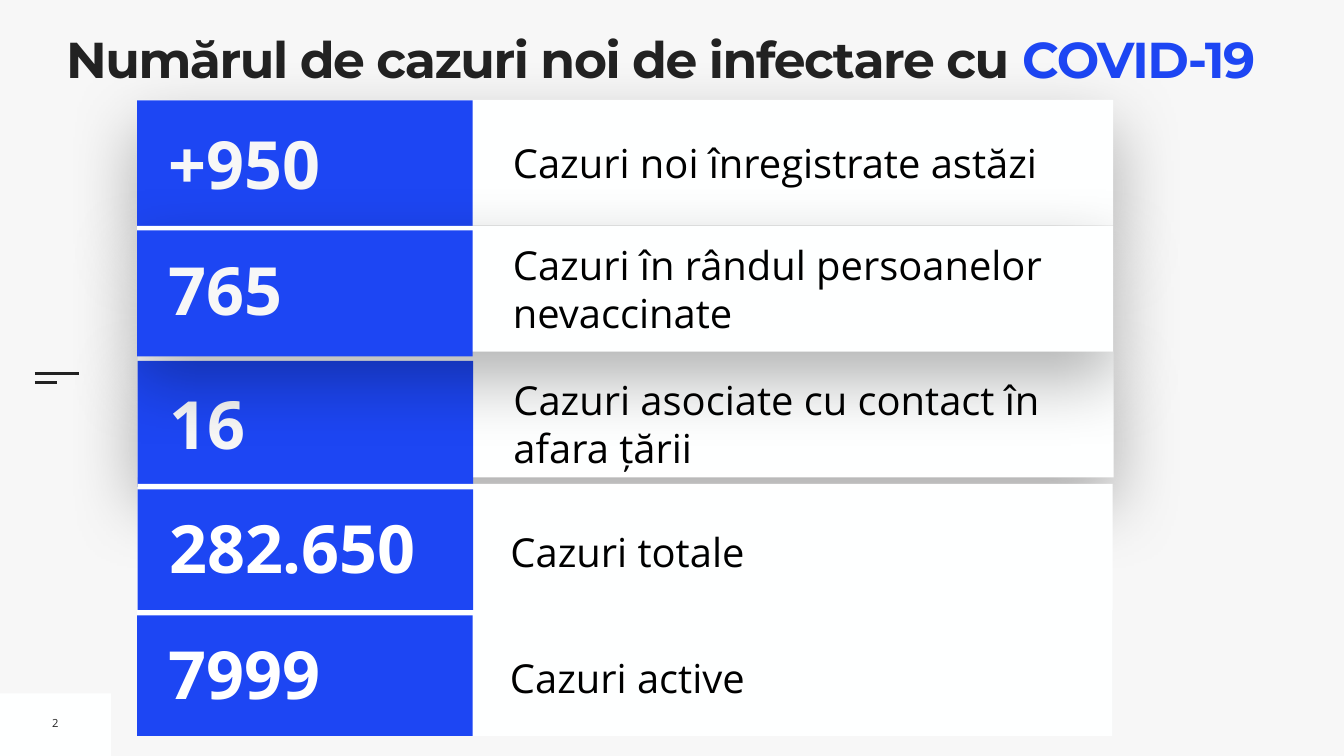
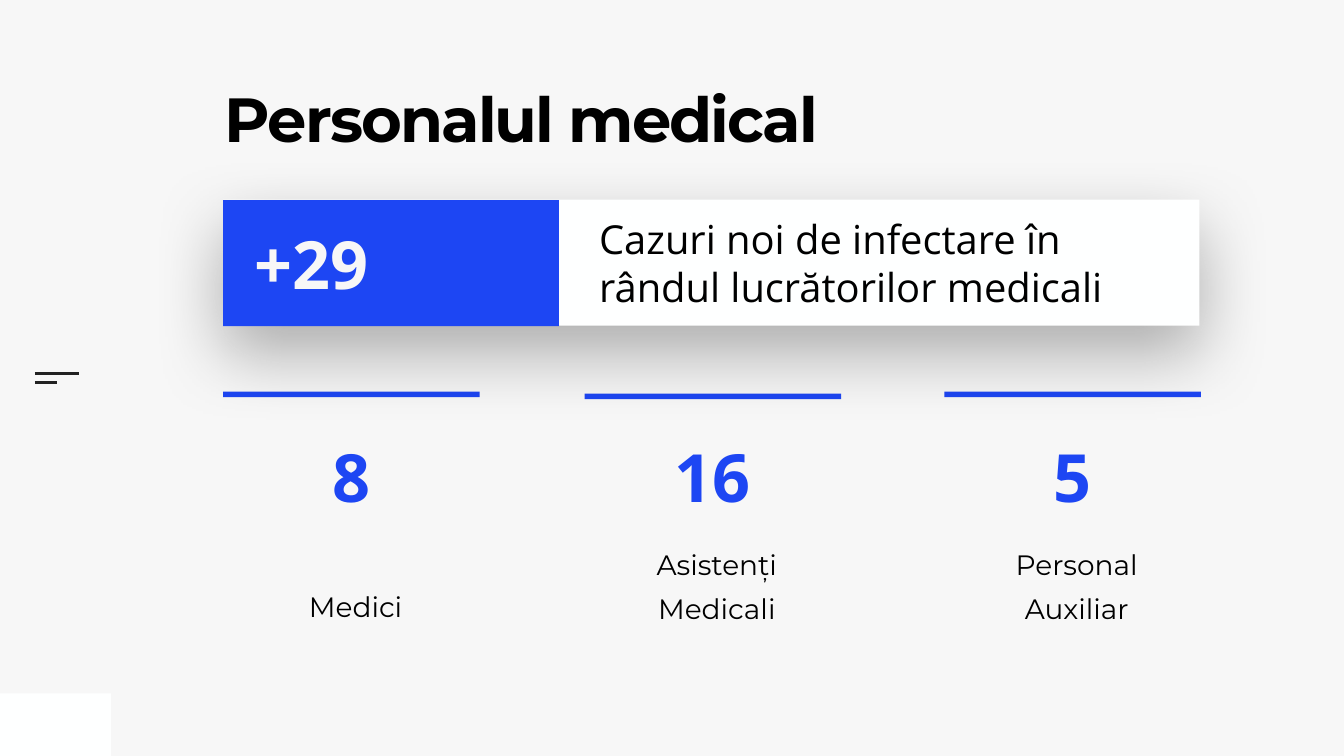
from lxml import etree
from pptx import Presentation
from pptx.dml.color import RGBColor
from pptx.enum.shapes import MSO_CONNECTOR, MSO_SHAPE
from pptx.enum.text import MSO_ANCHOR, MSO_AUTO_SIZE, PP_ALIGN
from pptx.oxml.ns import qn
from pptx.util import Pt

PX = 9144  # one hundred px to the inch
RECTANGLE, STRAIGHT = MSO_SHAPE.RECTANGLE, MSO_CONNECTOR.STRAIGHT
TOP, MIDDLE, BOTTOM = MSO_ANCHOR.TOP, MSO_ANCHOR.MIDDLE, MSO_ANCHOR.BOTTOM
LEFT, CENTER = PP_ALIGN.LEFT, PP_ALIGN.CENTER
FIXED, GROW = MSO_AUTO_SIZE.NONE, MSO_AUTO_SIZE.SHAPE_TO_FIT_TEXT

BLUE, WHITE, CARD, PAPER, INK, BLACK = "1D46F3", "FFFFFF", "FEFFFF", "F7F7F7", "222222", "000000"
color = RGBColor.from_string

# Text styles
LOOSE = {"line_spacing": 1.3, "space_before": Pt(20)}
TITLE = {"frame": {"vertical_anchor": TOP, "auto_size": FIXED}, "insets": (0, 0, 0, 0),
         "paragraph": {"alignment": LEFT, "line_spacing": 0.8},
         "font": {"name": "Montserrat", "bold": True}}
VALUE = {"frame": {"vertical_anchor": MIDDLE, "auto_size": GROW}, "insets": (10, 10, 10, 10),
         "paragraph": {"alignment": LEFT},
         "font": {"name": "Open Sans", "size": Pt(95), "bold": True}}
BIG_VALUE = {**VALUE, "paragraph": {"alignment": CENTER}}
LABEL = {**VALUE, "font": {"name": "Open Sans", "size": Pt(57)}}
LOOSE_LABEL = {**LABEL, "insets": (0, 0, 0, 0), "paragraph": {"alignment": LEFT, **LOOSE}}
NUMBER = {**BIG_VALUE, "font": {"name": "Open Sans", "size": Pt(16)}}
CAPTION = {"frame": {"vertical_anchor": BOTTOM, "auto_size": FIXED}, "insets": (55, 71, 39, 87),
           "paragraph": {"alignment": CENTER, **LOOSE},
           "font": {"name": "Montserrat", "size": Pt(40)}}


def add_block(shapes, at, fill, shadowed=False):
    shape = shapes.add_shape(RECTANGLE, *[value * PX for value in at])
    shape.fill.solid()
    shape.fill.fore_color.rgb = color(fill)
    shape.line.fill.background()
    shape.shadow.inherit = False
    if shadowed:
        effects = shape.element.spPr.find(qn("a:effectLst"))
        shadow = etree.SubElement(effects, qn("a:outerShdw"), blurRad=str(Pt(100)),
                                  dist=str(Pt(40)), dir="5400000", rotWithShape="0")
        shade = etree.SubElement(shadow, qn("a:srgbClr"), val=BLACK)
        etree.SubElement(shade, qn("a:alpha"), val="30000")
    return shape


def write_text(shape, runs, style, wrap=True):
    frame = shape.text_frame
    frame.word_wrap = wrap
    for name, value in style["frame"].items():
        setattr(frame, name, value)
    for side, inset in zip(("left", "top", "right", "bottom"), style["insets"]):
        setattr(frame, f"margin_{side}", inset * PX)
    paragraph = frame.paragraphs[0]
    for name, value in style["paragraph"].items():
        setattr(paragraph, name, value)
    for text, ink in runs:
        run = paragraph.add_run()
        run.text = text
        run.font.color.rgb = color(ink)
        for name, value in style["font"].items():
            setattr(run.font, name, value)


presentation = Presentation()
presentation.slide_width, presentation.slide_height = 2667 * PX, 1500 * PX
layout = presentation.slide_layouts[5]
cases, staff = [presentation.slides.add_slide(layout) for _ in range(2)]

# Shared background, corner block and side lines, kept on the master
master = presentation.slide_master
master.background.fill.solid()
master.background.fill.fore_color.rgb = color(PAPER)
decorations = [add_block(cases.shapes, (0, 1376, 220, 124), CARD)]
for right, y in ((157, 741), (113, 759)):
    line = cases.shapes.add_connector(STRAIGHT, 69 * PX, y * PX, right * PX, y * PX)
    line.line.color.rgb = color(INK)
    line.line.width = Pt(3)
    etree.SubElement(line.element.spPr, qn("a:effectLst"))
    decorations.append(line)
for position, decoration in enumerate(decorations, start=2):
    master.shapes.element.insert(position, decoration.element)

# Titles
titles = [
    (cases, (131, 78, 2394, 158), 72, -200,
     [("Numărul de cazuri noi de infectare cu ", INK), ("COVID-19", BLUE)]),
    (staff, (446, 187, 1301, 273), 89, -270, [("Personalul medical", BLACK)]),
]
for slide, at, size, tracking, runs in titles:
    title = slide.shapes.title
    title.left, title.top, title.width, title.height = [value * PX for value in at]
    write_text(title, runs, {**TITLE, "font": {**TITLE["font"], "size": Pt(size)}})
    for run in title.text_frame.paragraphs[0].runs:
        run.font.bold = True
        run.font._element.set("spc", str(tracking))

# Page number
number = cases.shapes.add_textbox(93 * PX, 1409 * PX, 34 * PX, 51 * PX)
write_text(number, [("2", INK)], NUMBER, wrap=False)

# Staff columns: caption panel, bar and count
columns = [(443, 777, 777, "8", "Medici"), (1160, 781, 781, "16", "Asistenți Medicali"),
           (1874, 781, 777, "5", "Personal Auxiliar")]
for left, panel_top, bar_top, count, caption in columns:
    panel = add_block(staff.shapes, (left, panel_top, 509, 546), PAPER)
    write_text(panel, [(caption, BLACK)], CAPTION)
    add_block(staff.shapes, (left, bar_top, 509, 11), BLUE)
    box = staff.shapes.add_textbox(left * PX, 854 * PX, 509 * PX, 180 * PX)
    write_text(box, [(count, BLUE)], BIG_VALUE)

# Figure rows: slide, left, top, value, label, label height, block drop, text drop, shadowed
rows = [
    (cases, 272, 1210, "7999", "Cazuri active", 125, 11, 0, False),
    (cases, 272, 198, "+950", "Cazuri noi înregistrate astăzi", 116, 1, 0, True),
    (cases, 273, 697, "16", "Cazuri asociate cu contact în afara țării", 212, 19, 18, True),
    (cases, 272, 448, "765", "Cazuri în rândul persoanelor nevaccinate", 212, 9, 0, True),
    (cases, 273, 960, "282.650", "Cazuri totale", 112, 11, 0, False),
    (staff, 443, 396, "+29", "Cazuri noi de infectare în rândul lucrătorilor medicali",
     212, 1, 0, True),
]
for slide, left, top, value, label, label_height, block_drop, text_drop, shadowed in rows:
    if shadowed:
        card_width, block_height, label_left, label_width, middle = 1937, 250, 736, 1176, 125
        label_style, value_ink = LABEL, PAPER
    else:
        card_width, block_height, label_left, label_width, middle = 1935, 239, 740, 1158, 120
        label_style, value_ink = LOOSE_LABEL, WHITE
    shapes = slide.shapes.add_group_shape().shapes
    add_block(shapes, (left, top, card_width, 250), CARD, shadowed)
    label_top = top + middle + text_drop - label_height // 2
    box = shapes.add_textbox((left + label_left) * PX, label_top * PX,
                             label_width * PX, label_height * PX)
    write_text(box, [(label, BLACK)], label_style)
    add_block(shapes, (left, top + block_drop, 666, block_height), BLUE)
    box = shapes.add_textbox((left + 53) * PX, (top + 35 + text_drop) * PX, 603 * PX, 180 * PX)
    write_text(box, [(value, value_ink)], VALUE)

presentation.save("out.pptx")
